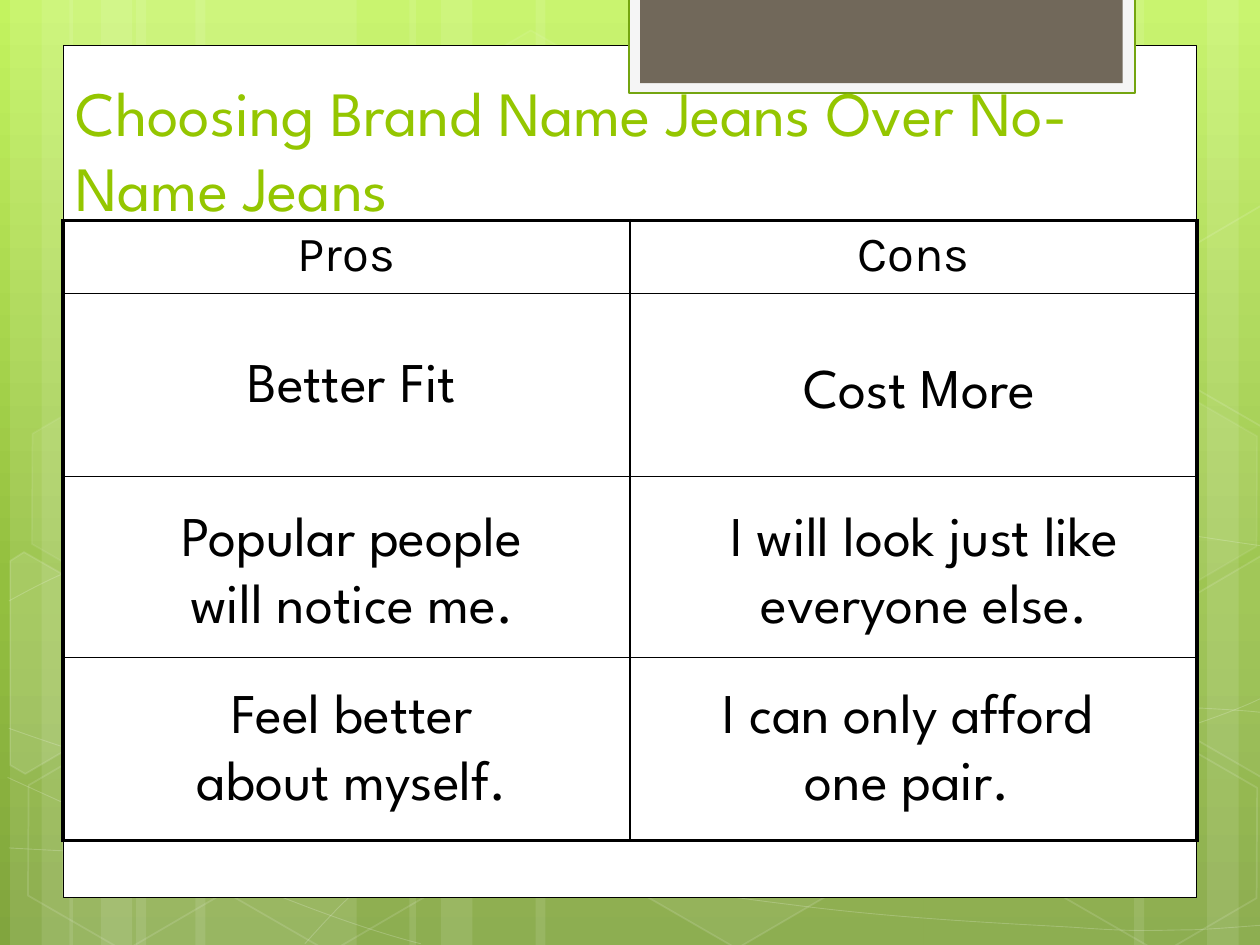
from copy import deepcopy
from math import cos, radians, sin
from typing import NamedTuple, Optional

from lxml.etree import SubElement
from pptx import Presentation
from pptx.dml.color import RGBColor
from pptx.enum.shapes import MSO_SHAPE as Preset
from pptx.enum.text import MSO_ANCHOR as Anchor, PP_ALIGN as Align
from pptx.oxml.ns import qn
from pptx.util import Inches, Pt

COLORS = {
    "white": "FFFFFF", "black": "000000", "title": "94C600",
    "tab": "F5F5F5", "tab_line": "74A510", "tab_inner": "71685A",
    "sky": "C3F35F", "meadow": "93BF3F", "ground": "81A53E",
}
BACKGROUND_STOPS = [(0, "sky"), (0.62, "meadow"), (1, "ground")]
BODY_FONT, HEADER_FONT = "League Spartan", "Karla"
HEXAGON_SIZE = (1.75, 1.52)
HEXAGON_TILT = 30


class Stripe(NamedTuple):
    left: float
    width: float
    rotation: int = 0


class Hexagon(NamedTuple):
    left: float
    top: float
    fill_opacity: Optional[int]
    line_opacity: int


class CutHexagon(NamedTuple):
    center: tuple
    points: list
    fill_opacity: Optional[int]


class Label(NamedTuple):
    text: str
    left: float
    top: float
    width: float
    height: float


STRIPES = [Stripe(*values) for values in [
    (1.08, 1.75), (0.08, 0.5), (0.33, 0.83), (1.55, 1.75), (0.55, 0.5), (0.8, 0.83),
    (7.33, 1.75, 180), (9.58, 0.5, 180), (9, 0.83, 180), (4.25, 3.08), (3.25, 0.5), (3.5, 0.83),
]]
# Each curve is a start point followed by cubic Bezier triples.
CURVES = [
    [(0.07, 6.73), (0.61, 6.76), (1.15, 6.79), (1.9, 6.78), (2.65, 6.77), (3.58, 6.75),
     (4.58, 6.65), (5.58, 6.55), (7, 6.36), (7.92, 6.17), (8.83, 5.98), (9.77, 5.68),
     (10.07, 5.51)],
    [(0.07, 4.77), (0.36, 4.61), (0.65, 4.46), (1.21, 4.31), (1.78, 4.16), (2.59, 3.94),
     (3.47, 3.87), (4.36, 3.8), (5.44, 3.79), (6.54, 3.87), (7.64, 3.95), (9.47, 4.26),
     (10.07, 4.34)],
    [(0.06, 6.17), (1.27, 6.72), (2.47, 7.27), (3.34, 7.49)],
    [(0.07, 5.78), (0.38, 5.89), (0.7, 6), (1.28, 6.16), (1.86, 6.31), (2.73, 6.56),
     (3.57, 6.73), (4.4, 6.9), (5.45, 7.08), (6.28, 7.18), (7.11, 7.29), (8, 7.33),
     (8.53, 7.36), (9.05, 7.4), (9.19, 7.38), (9.45, 7.38), (9.71, 7.37), (9.89, 7.35),
     (10.07, 7.34)],
    [(2.42, 7.49), (2.6, 7.29), (2.78, 7.09), (3.02, 6.91), (3.26, 6.73), (3.6, 6.53),
     (3.88, 6.39), (4.16, 6.25), (4.33, 6.19), (4.7, 6.09), (5.06, 5.99), (5.73, 5.85),
     (6.08, 5.78), (6.44, 5.71), (6.49, 5.71), (6.8, 5.69), (7.11, 5.66), (7.6, 5.63),
     (7.94, 5.62), (8.29, 5.61), (8.86, 5.62), (8.86, 5.62), (8.86, 5.62), (9.53, 5.62),
     (9.53, 5.62), (9.71, 5.63), (9.88, 5.64), (9.97, 5.65), (10.06, 5.66), (10.03, 5.65),
     (10.06, 5.66)],
]
HEXAGONS = [Hexagon(*values) for values in [
    (3.34, 0.36, 4, 8), (4.97, 5.89, 6, 12), (0.11, 5.91, None, 12), (0.14, 3.12, 7, 8),
    (1.74, 5.92, None, 12), (7.53, 4.53, 10, 12), (8.34, 5.93, None, 12), (8.34, 3.14, 7, 8),
]]
CUT_HEXAGONS = [
    CutHexagon((0.36, 5.35), [(0.08, 4.45), (0.19, 4.38), (0.96, 4.82), (0.95, 5.7),
                              (0.2, 6.14), (0.08, 6.07)], 10),
    CutHexagon((9.85, 5.2), [(9.26, 4.85), (10.01, 4.41), (10.09, 4.46), (10.09, 6.13),
                             (10.02, 6.17), (9.26, 5.73)], 4),
    CutHexagon((9.85, 2.41), [(9.26, 2.07), (10.01, 1.63), (10.1, 1.68), (10.09, 3.35),
                              (10.02, 3.39), (9.26, 2.95)], None),
]
TITLE = Label("Choosing Brand Name Jeans Over No-Name Jeans", 0.5, 0.58, 9, 1.25)
HEADERS = ["Pros", "Cons"]
ROW_HEIGHTS = [0.58, 1.45, 1.44, 1.45]
COLUMN_WIDTH = 4.5
REASONS = [Label(*values) for values in [
    ("Better Fit", 1.17, 2.7, 3.25, 0.63),
    ("Cost More", 5.67, 2.75, 3.25, 0.63),
    ("Popular people will notice me.", 1.17, 3.92, 3.25, 1.17),
    ("I will look just like everyone else.", 5.42, 3.92, 3.83, 1.17),
    ("Feel better about myself.", 1.17, 5.33, 3.25, 1.17),
    ("I can only afford one pair.", 5.58, 5.33, 3.25, 1.17),
]]


def rgb(name: str) -> RGBColor:
    return RGBColor.from_string(COLORS[name])


def set_opacity(parent, percent: int) -> None:
    color = next(parent.iter(qn("a:srgbClr")))
    SubElement(color, qn("a:alpha"), val=str(percent * 1000))


def style_shape(shape, fill=None, line=None, line_width=1.0,
                fill_opacity=100, line_opacity=100) -> None:
    shape.shadow.inherit = False
    properties = shape.element.spPr
    if fill:
        shape.fill.solid()
        shape.fill.fore_color.rgb = rgb(fill)
        if fill_opacity < 100:
            set_opacity(properties.find(qn("a:solidFill")), fill_opacity)
    else:
        shape.fill.background()
    if line:
        shape.line.color.rgb = rgb(line)
        shape.line.width = Pt(line_width)
        if line_opacity < 100:
            set_opacity(properties.find(qn("a:ln")), line_opacity)
    else:
        shape.line.fill.background()


def style_glass(shape, fill_opacity: Optional[int], line_opacity: int) -> None:
    """Tilt a hexagon and give it a faint white outline and optional faint fill."""
    shape.rotation = HEXAGON_TILT
    style_shape(shape, "white" if fill_opacity else None, "white", 1,
                fill_opacity or 100, line_opacity)


def add_preset(slide, preset, left: float, top: float, width: float, height: float):
    return slide.shapes.add_shape(preset, Inches(left), Inches(top), Inches(width), Inches(height))


def add_outline(slide, points: list, close: bool):
    corners = [(Inches(x), Inches(y)) for x, y in points]
    builder = slide.shapes.build_freeform(*corners[0])
    builder.add_line_segments(corners[1:], close=close)
    return builder.convert_to_shape()


def add_curve(slide, controls: list):
    """Draw chained cubic Beziers by merging each three line steps into one curve step."""
    shape = add_outline(slide, controls, close=False)
    steps = list(shape.element.iter(qn("a:lnTo")))
    for index in range(0, len(steps), 3):
        first, second, last = steps[index:index + 3]
        start, handle, other_handle, end = controls[index:index + 4]
        if (start, end) != (handle, other_handle):
            first.tag = qn("a:cubicBezTo")
            first.extend([second[0], last[0]])
        else:
            first.replace(first[0], last[0])
        for step in (second, last):
            step.getparent().remove(step)
    return shape


def untilt(point: tuple, center: tuple) -> tuple:
    angle = radians(HEXAGON_TILT)
    x, y = point[0] - center[0], point[1] - center[1]
    return (center[0] + x * cos(angle) + y * sin(angle),
            center[1] - x * sin(angle) + y * cos(angle))


def paint_background(slide) -> None:
    fill = slide.background.fill
    fill.gradient()
    fill.gradient_angle = 270
    first = next(slide.element.iter(qn("a:gs")))
    first.addnext(deepcopy(first))
    for stop, (position, color) in zip(fill.gradient_stops, BACKGROUND_STOPS):
        stop.position = position
        stop.color.rgb = rgb(color)


def add_decoration(slide) -> None:
    for stripe in STRIPES:
        shape = add_preset(slide, Preset.RECTANGLE, stripe.left, 0, stripe.width, 7.5)
        shape.rotation = stripe.rotation
        style_shape(shape, "white", fill_opacity=10)
    for controls in CURVES:
        style_shape(add_curve(slide, controls), line="white", line_width=0.5, line_opacity=20)
    for hexagon in HEXAGONS:
        shape = add_preset(slide, Preset.HEXAGON, hexagon.left, hexagon.top, *HEXAGON_SIZE)
        shape.adjustments[0], shape.adjustments[1] = 0.285, 1.155
        style_glass(shape, hexagon.fill_opacity, hexagon.line_opacity)
    for hexagon in CUT_HEXAGONS:
        points = [untilt(point, hexagon.center) for point in hexagon.points]
        style_glass(add_outline(slide, points, close=True), hexagon.fill_opacity, 12)


def format_text(text_frame, font: str, size: int, color: str, align) -> None:
    for paragraph in text_frame.paragraphs:
        paragraph.alignment = align
        for run in paragraph.runs:
            run.font.name, run.font.size = font, Pt(size)
            run.font.color.rgb = rgb(color)


def add_label(slide, label: Label, size: int, color="black", align=Align.CENTER, anchor=Anchor.TOP):
    frame = slide.shapes.add_textbox(*(Inches(value) for value in label[1:])).text_frame
    frame.word_wrap = True
    frame.vertical_anchor = anchor
    frame.text = label.text
    format_text(frame, BODY_FONT, size, color, align)


def add_border(cell, side: str, width: float) -> None:
    line = SubElement(cell._tc.get_or_add_tcPr(), qn(f"a:ln{side}"), w=str(Pt(width)))
    SubElement(SubElement(line, qn("a:solidFill")), qn("a:srgbClr"), val=COLORS["black"])


def add_pros_and_cons(slide) -> None:
    last_row, last_column = len(ROW_HEIGHTS) - 1, len(HEADERS) - 1
    table = slide.shapes.add_table(
        len(ROW_HEIGHTS), len(HEADERS), Inches(0.5), Inches(1.75),
        Inches(COLUMN_WIDTH * len(HEADERS)), Inches(sum(ROW_HEIGHTS))).table
    table.first_row = table.horz_banding = False
    for row_index, height in enumerate(ROW_HEIGHTS):
        table.rows[row_index].height = Inches(height)
        for column_index, header in enumerate(HEADERS):
            cell = table.cell(row_index, column_index)
            outer = {"L": column_index == 0, "R": column_index == last_column,
                     "T": row_index == 0, "B": row_index == last_row}
            for side, is_outer in outer.items():
                add_border(cell, side, 2.25 if is_outer else 1)
            cell.fill.background()
            if row_index == 0:
                cell.text_frame.text = header
                format_text(cell.text_frame, HEADER_FONT, 28, "black", Align.CENTER)


def main() -> None:
    presentation = Presentation()
    presentation.slide_width, presentation.slide_height = Inches(10), Inches(7.5)
    slide = presentation.slides.add_slide(presentation.slide_layouts[6])
    paint_background(slide)
    add_decoration(slide)
    style_shape(add_preset(slide, Preset.RECTANGLE, 0.5, 0.36, 9, 6.76), "white", "black", 0.5)
    style_shape(add_preset(slide, Preset.RECTANGLE, 4.99, -0.02, 4.02, 0.76),
                "tab", "tab_line", 1.25)
    style_shape(add_preset(slide, Preset.RECTANGLE, 5.08, -0.02, 3.83, 0.68), "tab_inner")
    add_label(slide, TITLE, 36, "title", Align.LEFT, Anchor.BOTTOM)
    add_pros_and_cons(slide)
    for reason in REASONS:
        add_label(slide, reason, 32)
    presentation.save("out.pptx")


if __name__ == "__main__":
    main()
